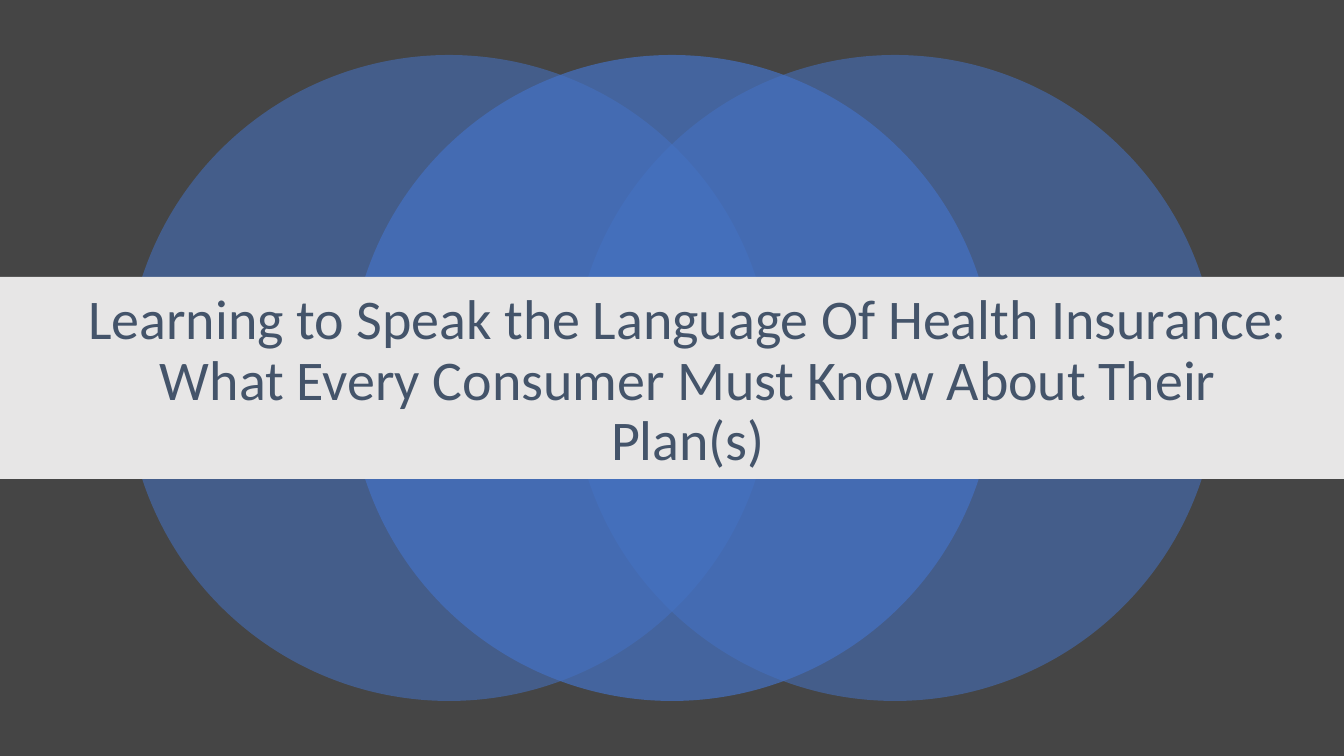
from dataclasses import dataclass
from lxml.etree import SubElement
from pptx import Presentation
from pptx.dml.color import RGBColor as Rgb
from pptx.enum.shapes import MSO_SHAPE as Shape
from pptx.enum.text import MSO_ANCHOR as Anchor, MSO_AUTO_SIZE as Fit, PP_ALIGN as Align
from pptx.oxml.ns import qn
from pptx.util import Pt

# Content
TITLE = ("Learning to Speak the Language Of Health Insurance: "
         "What Every Consumer Must Know About Their Plan(s)")
RINGS = [(-1, 55), (1, 55), (0, 70)]  # steps from the centre, opacity in percent

# Layout in px
WIDE, HIGH = 1344, 756
RING, STEP = 646, 223
BAND = (0, 277, WIDE, 202)
HEAD = (67, 306, 1242, 152)
SCALE = 12192000 / WIDE


@dataclass(frozen=True)
class Theme:
    back: Rgb = Rgb.from_string("454545")
    ring: Rgb = Rgb.from_string("4472C4")
    band: Rgb = Rgb.from_string("E7E6E6")
    text: Rgb = Rgb.from_string("44546A")
    font: str = "Calibri"
    size: int = 40


THEME = Theme()


def emu(*nums):
    return [round(num * SCALE) for num in nums]


def draw(shapes, kind, box, color):
    item = shapes.add_shape(kind, *emu(*box))
    item.shadow.inherit = False
    item.fill.solid()
    item.fill.fore_color.rgb = color
    item.line.fill.background()
    return item


def fade(item, percent):
    color = item._element.spPr.find(qn("a:solidFill"))[0]
    SubElement(color, qn("a:alpha"), val=str(percent * 1000))


def main():
    deck = Presentation()
    deck.slide_width, deck.slide_height = emu(WIDE, HIGH)
    slide = deck.slides.add_slide(deck.slide_layouts[5])
    slide.background.fill.solid()
    slide.background.fill.fore_color.rgb = THEME.back

    # Overlapping circles
    group = slide.shapes.add_group_shape()
    for step, percent in RINGS:
        left = (WIDE - RING) // 2 + step * STEP
        ring = draw(group.shapes, Shape.OVAL,
                    (left, (HIGH - RING) // 2, RING, RING), THEME.ring)
        fade(ring, percent)

    # Band behind the title
    draw(slide.shapes, Shape.RECTANGLE, BAND, THEME.band)

    # Title, brought to the front
    title = slide.shapes.title
    slide.shapes._spTree.append(title._element)
    title.left, title.top, title.width, title.height = emu(*HEAD)
    frame = title.text_frame
    frame.text = TITLE
    frame.word_wrap = True
    frame.auto_size = Fit.NONE
    frame.vertical_anchor = Anchor.MIDDLE
    para = frame.paragraphs[0]
    para.alignment = Align.CENTER
    para.line_spacing = 0.9
    font = para.runs[0].font
    font.name, font.size = THEME.font, Pt(THEME.size)
    font.color.rgb = THEME.text

    deck.save("out.pptx")


if __name__ == "__main__":
    main()
